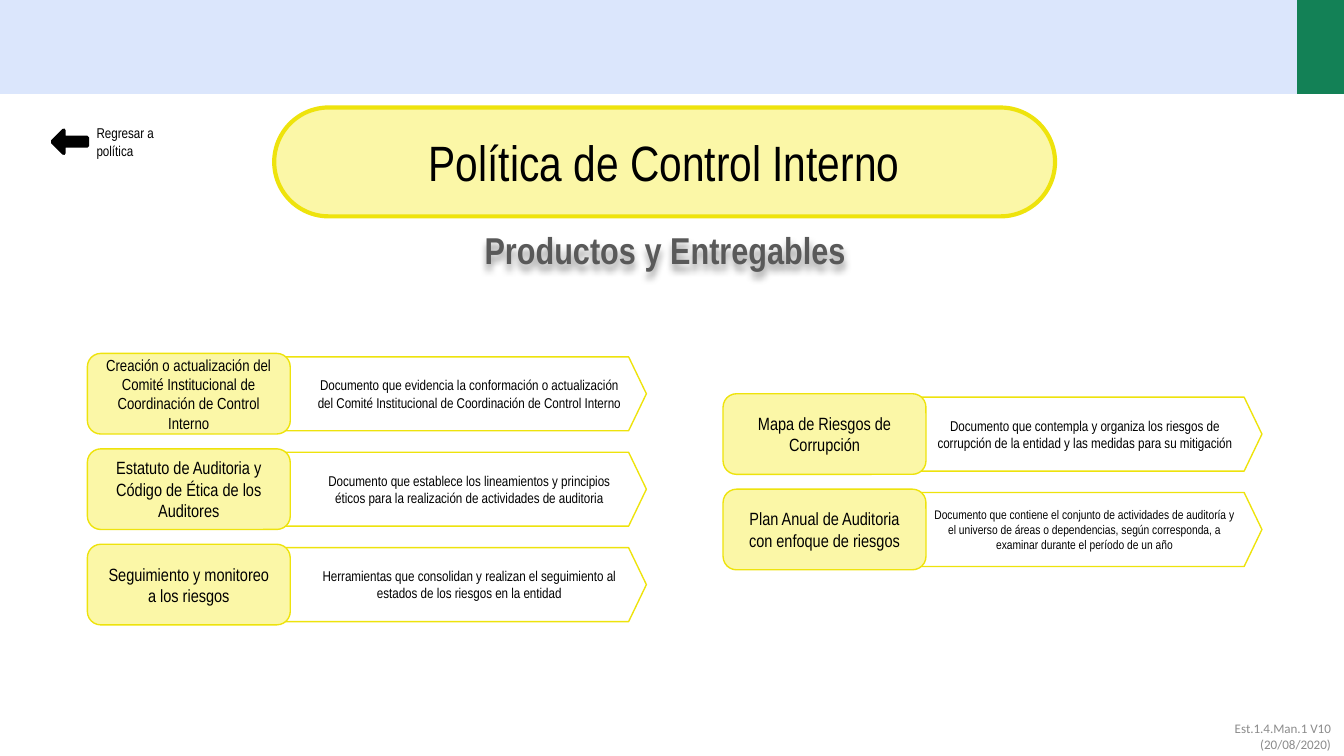
from dataclasses import dataclass

from lxml import etree
from pptx import Presentation
from pptx.dml.color import RGBColor as Rgb
from pptx.enum.shapes import MSO_SHAPE as Geo
from pptx.enum.text import MSO_ANCHOR as Anchor, PP_ALIGN as Align
from pptx.oxml import parse_xml
from pptx.oxml.ns import nsdecls, qn
from pptx.util import Inches, Pt

HUES = {
    "band": "DBE6FC", "green": "138156", "pale": "FBF7A7", "gold": "EEE30C",
    "black": "000000", "gray": "595959", "foot": "8C8C8C",
}
FACE = "Arial Narrow"
WIDE = 10        # slide width, in a 16:9 format
STEP = 0.71      # distance between rows


@dataclass
class Box:
    left: float
    top: float
    width: float
    height: float


@dataclass
class Item:
    tag: str
    note: str
    tag_size: float = 9.5
    note_size: float = 7.6


@dataclass
class Group:
    left: float
    top: float
    gap: float       # tag edge to note edge
    items: list[Item]


GROUPS = [
    Group(0.65, 2.63, 1.3, [
        Item("Creación o actualización del Comité Institucional de Coordinación de Control Interno",
             "Documento que evidencia la conformación o actualización del Comité "
             "Institucional de Coordinación de Control Interno", tag_size=8.6),
        Item("Estatuto de Auditoria y Código de Ética de los Auditores",
             "Documento que establece los lineamientos y principios éticos para la "
             "realización de actividades de auditoria"),
        Item("Seguimiento y monitoreo a los riesgos",
             "Herramientas que consolidan y realizan el seguimiento al estados de los "
             "riesgos en la entidad"),
    ]),
    Group(5.38, 2.93, 1.15, [
        Item("Mapa de Riesgos de Corrupción",
             "Documento que contempla y organiza los riesgos de corrupción de la entidad "
             "y las medidas para su mitigación"),
        Item("Plan Anual de Auditoria con enfoque de riesgos",
             "Documento que contiene el conjunto de actividades de auditoría y el universo "
             "de áreas o dependencias, según corresponda, a examinar durante el período de "
             "un año", note_size=6.7),
    ]),
]


def hue(name: str) -> Rgb:
    return Rgb.from_string(HUES[name])


def place(box: Box) -> list:
    return [Inches(n) for n in (box.left, box.top, box.width, box.height)]


def write(shape, text: str, size: float, align=Align.CENTER, anchor=Anchor.MIDDLE,
          color: str = "black", face: str = FACE, bold: bool = False,
          indent: float = 0) -> None:
    frame = shape.text_frame
    frame.word_wrap = True
    frame.vertical_anchor = anchor
    para = frame.paragraphs[0]
    para.alignment = align
    if indent:
        props = para._p.get_or_add_pPr()
        props.set("marL", str(Inches(indent)))
        props.set("indent", "0")
    run = para.add_run()
    run.text = text
    for key, value in {"name": face, "size": Pt(size), "bold": bold}.items():
        setattr(run.font, key, value)
    run.font.color.rgb = hue(color)


def draw(slide, kind, box: Box, fill: str = "", line: str = "",
         weight: float = 0.75, adjust: tuple = ()):
    shape = slide.shapes.add_shape(kind, *place(box))
    shape.shadow.inherit = False
    if fill:
        shape.fill.solid()
        shape.fill.fore_color.rgb = hue(fill)
    else:
        shape.fill.background()
    if line:
        shape.line.color.rgb = hue(line)
        shape.line.width = Pt(weight)
    else:
        shape.line.fill.background()
    for i, value in enumerate(adjust):
        shape.adjustments[i] = value
    return shape


def label(slide, box: Box, text: str, size: float, **form):
    shape = slide.shapes.add_textbox(*place(box))
    write(shape, text, size, **form)
    return shape


def add_row(slide, left: float, top: float, gap: float, item: Item) -> None:
    note = draw(slide, Geo.PENTAGON, Box(left + gap, top + 0.025, 2.86, 0.55),
                line="gold", adjust=(0.24,))
    write(note, item.note, item.note_size, indent=0.29)
    tag = draw(slide, Geo.ROUNDED_RECTANGLE, Box(left, top, 1.51, 0.6), "pale", "gold")
    write(tag, item.tag, item.tag_size)


def cast(shape) -> None:
    """Soft shadow under the words of an unfilled box."""
    shape._element.spPr.append(parse_xml(
        f'<a:effectLst {nsdecls("a")}><a:outerShdw blurRad="50800" dist="38100" '
        'dir="5400000" algn="t" rotWithShape="0"><a:srgbClr val="000000">'
        '<a:alpha val="40000"/></a:srgbClr></a:outerShdw></a:effectLst>'))


def main() -> None:
    deck = Presentation()
    deck.slide_width, deck.slide_height = Inches(WIDE), Inches(WIDE * 9 / 16)
    slide = deck.slides.add_slide(deck.slide_layouts[6])

    # Top band
    draw(slide, Geo.RECTANGLE, Box(9.65, 0, 0.35, 0.7), "green")
    draw(slide, Geo.RECTANGLE, Box(0, 0, 9.65, 0.7), "band")

    # Title and heading
    title = draw(slide, Geo.ROUNDED_RECTANGLE, Box(2.04, 0.8, 5.81, 0.81),
                 "pale", "gold", 2.25, (0.5,))
    write(title, "Política de Control Interno", 26.6)
    head = label(slide, Box(1.23, 1.64, 7.44, 0.44), "Productos y Entregables", 20,
                 anchor=Anchor.TOP, color="gray", bold=True)
    cast(head)

    # Products with their notes
    for group in GROUPS:
        for i, item in enumerate(group.items):
            add_row(slide, group.left, group.top + i * STEP, group.gap, item)

    # Way back
    arrow = draw(slide, Geo.LEFT_ARROW, Box(0.39, 0.97, 0.26, 0.17),
                 "black", "black", 2, (0.36, 0.5))
    etree.SubElement(arrow.line._get_or_add_ln(), qn("a:round"))
    label(slide, Box(0.62, 0.88, 0.79, 0.36), "Regresar a política", 7.6,
          align=Align.LEFT, anchor=Anchor.TOP)

    # Footer
    label(slide, Box(8.61, 5.33, 1.39, 0.3), "Est.1.4.Man.1 V10 (20/08/2020)", 7,
          align=Align.RIGHT, color="foot", face="Calibri")

    deck.save("out.pptx")


if __name__ == "__main__":
    main()
